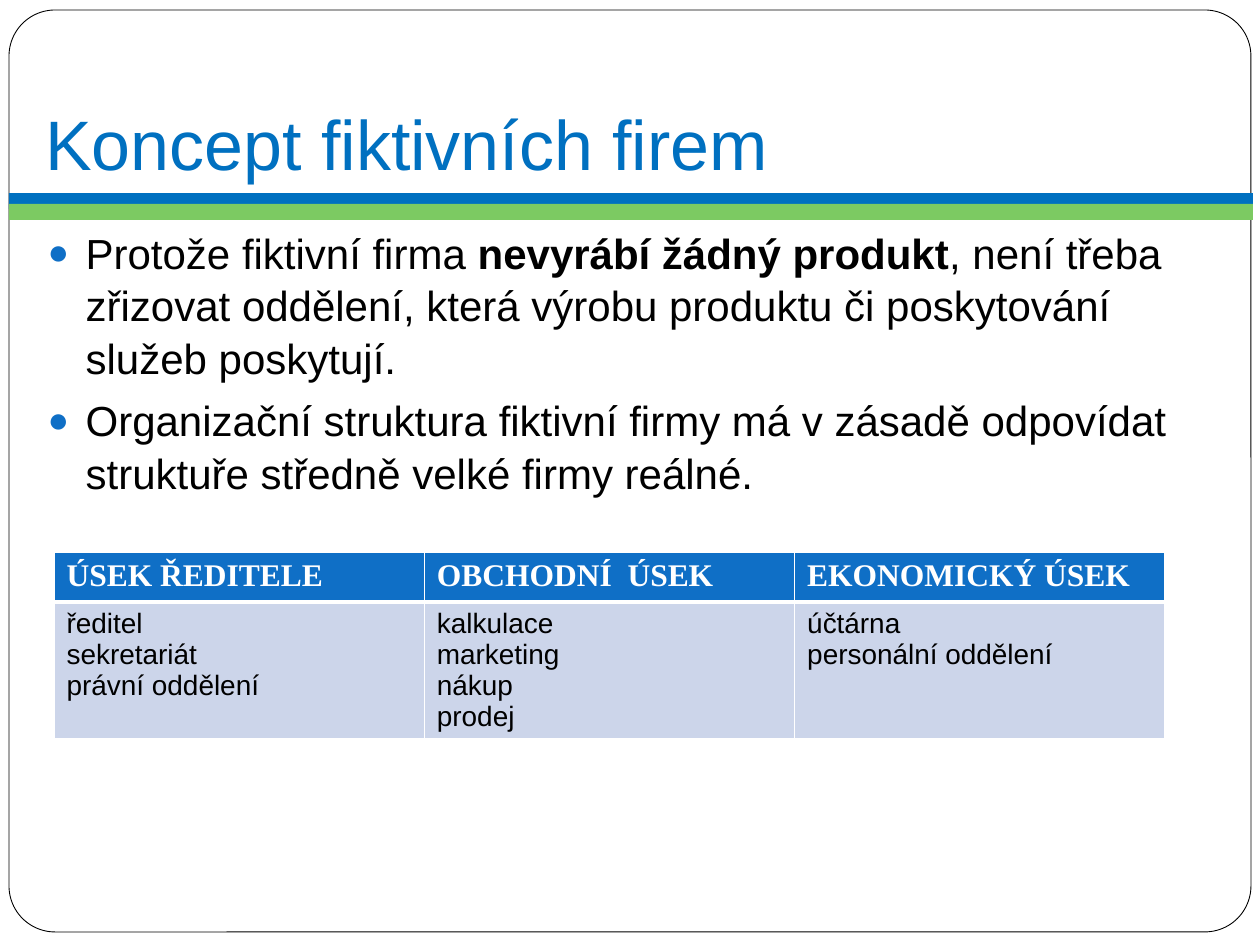
from lxml.etree import SubElement
from pptx import Presentation
from pptx.dml.color import RGBColor
from pptx.enum.shapes import MSO_SHAPE
from pptx.enum.text import MSO_ANCHOR, MSO_AUTO_SIZE, PP_ALIGN
from pptx.oxml.ns import qn
from pptx.util import Emu, Pt

EMU_PER_PX = 914400 / 126
COLORS = {
    "white": "FFFFFF", "black": "000000", "blue": "0070C0",
    "green": "7CCA62", "accent": "0F6FC6", "pale": "CCD5EA",
}
TITLE_FONT = {"name": "Arial", "size": Pt(40), "bold": False}
BODY_FONT = {"name": "Arial", "size": Pt(24), "bold": False}
STRONG_FONT = BODY_FONT | {"bold": True}
HEADER_FONT = {"name": "Times New Roman", "size": Pt(18), "bold": True}
CELL_FONT = {"name": "Arial", "size": Pt(16), "bold": False}

BULLETS = [
    [("Protože fiktivní firma ", BODY_FONT),
     ("nevyrábí žádný produkt", STRONG_FONT),
     (", není třeba zřizovat oddělení, která výrobu produktu či poskytování "
      "služeb poskytují.", BODY_FONT)],
    [("Organizační struktura fiktivní firmy má v zásadě odpovídat struktuře "
      "středně velké firmy reálné.", BODY_FONT)],
]
DEPARTMENTS = {
    "ÚSEK ŘEDITELE": ["ředitel", "sekretariát", "právní oddělení"],
    "OBCHODNÍ  ÚSEK": ["kalkulace", "marketing", "nákup", "prodej"],
    "EKONOMICKÝ ÚSEK": ["účtárna", "personální oddělení"],
}


def px(length):
    """Turn pixels into EMU."""
    return Emu(round(length * EMU_PER_PX))


def color(name):
    """Look up a palette colour."""
    return RGBColor.from_string(COLORS[name])


def place(shape, box):
    """Move and size a shape to a pixel box."""
    for name, length in zip(("left", "top", "width", "height"), box):
        setattr(shape, name, px(length))


def add_span(para, text, style, tint):
    """Append a formatted run to a paragraph."""
    span = para.add_run()
    span.text = text
    for name, value in style.items():
        setattr(span.font, name, value)
    span.font.color.rgb = color(tint)


def add_panel(page, kind, box, fill):
    """Add a flat filled shape."""
    panel = page.shapes.add_shape(kind, *map(px, box))
    panel.shadow.inherit = False
    panel.fill.solid()
    panel.fill.fore_color.rgb = color(fill)
    panel.line.fill.background()
    return panel


def add_backdrop(page, box):
    """Draw the rounded frame and its two stripes behind the placeholders."""
    left, top, width, height = box
    frame = add_panel(page, MSO_SHAPE.ROUNDED_RECTANGLE, box, "white")
    frame.adjustments[0] = 0.05
    frame.line.color.rgb = color("black")
    frame.line.width = Pt(0.5)
    stripes = [
        add_panel(page, MSO_SHAPE.RECTANGLE, (left, top + offset, width + 2, 16), fill)
        for offset, fill in ((183, "blue"), (194, "green"))
    ]
    tree = page.shapes.element
    for index, shape in enumerate([frame, *stripes], start=2):
        tree.insert(index, shape.element)


def fill_title(title, box):
    """Place and write the heading."""
    place(title, box)
    frame = title.text_frame
    settings = {
        "vertical_anchor": MSO_ANCHOR.BOTTOM, "auto_size": MSO_AUTO_SIZE.NONE,
        "margin_left": px(10), "margin_right": px(10),
        "margin_top": px(6), "margin_bottom": px(10),
    }
    for name, value in settings.items():
        setattr(frame, name, value)
    para = frame.paragraphs[0]
    para.alignment = PP_ALIGN.LEFT
    add_span(para, "Koncept fiktivních firem", TITLE_FONT, "blue")


def add_bullet(para):
    """Give a paragraph a hanging round bullet."""
    properties = para._p.get_or_add_pPr()
    properties.set("marL", str(px(38)))
    properties.set("indent", str(-px(38)))
    tint = SubElement(properties, qn("a:buClr"))
    SubElement(tint, qn("a:srgbClr"), val=COLORS["accent"])
    SubElement(properties, qn("a:buSzPct"), val="85000")
    SubElement(properties, qn("a:buFont"), typeface="Arial")
    SubElement(properties, qn("a:buChar"), char="●")


def fill_body(body, box):
    """Place and write the bulleted list."""
    place(body, box)
    frame = body.text_frame
    frame.auto_size = MSO_AUTO_SIZE.NONE
    frame.vertical_anchor = MSO_ANCHOR.TOP
    for index, spans in enumerate(BULLETS):
        para = frame.add_paragraph() if index else frame.paragraphs[0]
        para.line_spacing = 1.04
        para.space_before = Pt(5.8)
        add_bullet(para)
        for text, style in spans:
            add_span(para, text, style, "black")


def fill_cell(cell, lines, style, tint, fill, borders):
    """Write a cell, fill it and draw its white borders."""
    for index, text in enumerate(lines):
        frame = cell.text_frame
        para = frame.add_paragraph() if index else frame.paragraphs[0]
        add_span(para, text, style, tint)
    properties = cell._tc.get_or_add_tcPr()
    for side, width in borders.items():
        edge = SubElement(properties, qn(f"a:ln{side}"), w=str(Pt(width)))
        paint = SubElement(edge, qn("a:solidFill"))
        SubElement(paint, qn("a:srgbClr"), val=COLORS["white"])
    cell.fill.solid()
    cell.fill.fore_color.rgb = color(fill)


def add_departments(page, box):
    """Add the table of departments."""
    table = page.shapes.add_table(2, len(DEPARTMENTS), *map(px, box)).table
    table.horz_banding = False
    header_height = 50
    table.rows[0].height = px(header_height)
    table.rows[1].height = px(box[3] - header_height)
    thin = {"L": 1, "R": 1, "T": 1, "B": 1}
    for column, (heading, members) in enumerate(DEPARTMENTS.items()):
        fill_cell(table.cell(0, column), [heading], HEADER_FONT, "white", "accent",
                  thin | {"B": 3})
        fill_cell(table.cell(1, column), members, CELL_FONT, "black", "pale",
                  thin | {"T": 3})


def main():
    """Build and save the deck."""
    deck = Presentation()
    deck.slide_width, deck.slide_height = px(1260), px(945)
    page = deck.slides.add_slide(deck.slide_layouts[1])
    add_backdrop(page, (9, 10, 1242, 922))
    fill_title(page.shapes.title, (35, 26, 1191, 169))
    fill_body(page.placeholders[1], (35, 219, 1191, 273))
    add_departments(page, (54, 552, 1111, 187))
    deck.save("out.pptx")


if __name__ == "__main__":
    main()
